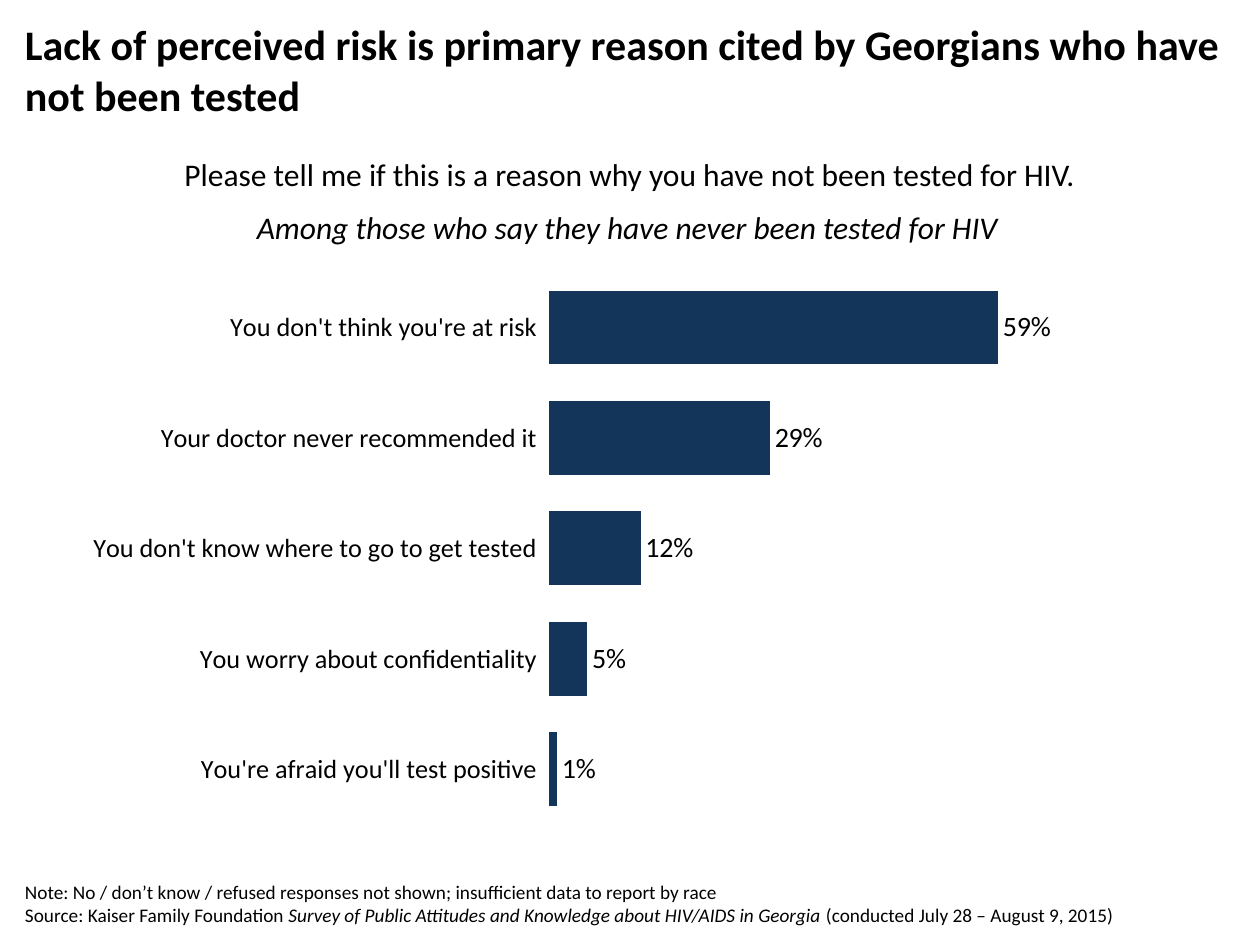
"""Build the slide on reasons Georgians give for not being tested for HIV."""
from lxml import etree
from pptx import Presentation
from pptx.chart.data import CategoryChartData
from pptx.dml.color import RGBColor
from pptx.enum.chart import XL_CHART_TYPE, XL_LABEL_POSITION, XL_TICK_MARK
from pptx.enum.text import MSO_ANCHOR, PP_ALIGN
from pptx.oxml.ns import qn
from pptx.util import Inches, Pt

BLACK = RGBColor(0x00, 0x00, 0x00)
NAVY = RGBColor(0x13, 0x35, 0x59)
FONT = "Calibri"
LEFT, CENTER = PP_ALIGN.LEFT, PP_ALIGN.CENTER
TOP, BOTTOM = MSO_ANCHOR.TOP, MSO_ANCHOR.BOTTOM
BAR_CLUSTERED = XL_CHART_TYPE.BAR_CLUSTERED
OUTSIDE_END = XL_LABEL_POSITION.OUTSIDE_END
TICK_OUTSIDE = XL_TICK_MARK.OUTSIDE

PLAIN, BOLD, ITALIC = {}, {"bold": True}, {"italic": True}
TEXTS = [
    {"box": (0.1, 0.1, 9.8, 1), "size": 24, "align": LEFT, "anchor": TOP,
     "paragraphs": [[("Lack of perceived risk is primary reason cited by Georgians "
                      "who have not been tested", BOLD)]]},
    {"box": (0.1, 1.18, 9.8, 0.4), "size": 18, "align": CENTER, "anchor": TOP,
     "paragraphs": [[("Please tell me if this is a reason why you have not been "
                      "tested for HIV.", PLAIN)]]},
    {"box": (0.08, 1.6, 9.8, 0.4), "size": 18, "align": CENTER, "anchor": TOP,
     "paragraphs": [[("Among those who say they have never been tested for HIV",
                      ITALIC)]]},
    {"box": (0.1, 6.8, 9.1, 0.6), "size": 11, "align": LEFT, "anchor": BOTTOM,
     "paragraphs": [
         [("Note: No / don’t know / refused responses not shown; insufficient data "
           "to report by race", PLAIN)],
         [("Source: Kaiser Family Foundation ", PLAIN),
          ("Survey of Public Attitudes and Knowledge about HIV/AIDS in Georgia ",
           ITALIC),
          ("(conducted July 28 – August 9, 2015)", PLAIN)]]},
]
REASONS = [
    ("You're afraid you'll test positive", 0.01),
    ("You worry about confidentiality", 0.05),
    ("You don't know where to go to get tested", 0.12),
    ("Your doctor never recommended it", 0.29),
    ("You don't think you're at risk", 0.59),
]
CHART_BOX = (0.1, 2.16, 8.82, 4.54)
PLOT_LAYOUT = {"layoutTarget": "inner", "xMode": "edge", "yMode": "edge",
               "x": 0.483, "y": 0, "w": 0.479, "h": 0.966}


def style_font(font, size, **formats):
    font.color.rgb = BLACK
    for name, value in {"name": FONT, "size": Pt(size), **formats}.items():
        setattr(font, name, value)


def add_text(slide, box, size, align, anchor, paragraphs):
    frame = slide.shapes.add_textbox(*map(Inches, box)).text_frame
    frame.word_wrap = True
    frame.vertical_anchor = anchor
    for index, runs in enumerate(paragraphs):
        paragraph = frame.add_paragraph() if index else frame.paragraphs[0]
        paragraph.alignment = align
        for text, formats in runs:
            run = paragraph.add_run()
            run.text = text
            style_font(run.font, size, **formats)


def set_plot_layout(chart):
    plot_area = chart.plots[0]._element.getparent()
    for old_layout in plot_area.findall(qn("c:layout")):
        plot_area.remove(old_layout)
    layout = etree.Element(qn("c:layout"))
    manual = etree.SubElement(layout, qn("c:manualLayout"))
    for name, value in PLOT_LAYOUT.items():
        etree.SubElement(manual, qn(f"c:{name}")).set("val", str(value))
    plot_area.insert(0, layout)


def add_reasons_chart(slide):
    data = CategoryChartData(number_format="0%")
    data.categories = [reason for reason, share in REASONS]
    data.add_series("Series 1", [share for reason, share in REASONS])
    chart = slide.shapes.add_chart(
        BAR_CLUSTERED, *map(Inches, CHART_BOX), data).chart
    chart.has_legend = False
    chart.has_title = False
    style_font(chart.font, 18)

    plot = chart.plots[0]
    plot.gap_width = 50
    plot.vary_by_categories = False
    fill = plot.series[0].format.fill
    fill.solid()
    fill.fore_color.rgb = NAVY

    plot.has_data_labels = True
    labels = plot.data_labels
    label_formats = {"show_value": True, "number_format": "0%",
                     "number_format_is_linked": False, "position": OUTSIDE_END}
    for name, value in label_formats.items():
        setattr(labels, name, value)
    style_font(labels.font, 16)

    category_axis = chart.category_axis
    category_axis.major_tick_mark = TICK_OUTSIDE
    category_axis.format.line.fill.background()
    style_font(category_axis.tick_labels.font, 15)
    value_axis = chart.value_axis
    axis_formats = {"visible": False, "has_major_gridlines": False,
                    "minimum_scale": 0, "maximum_scale": 0.7}
    for name, value in axis_formats.items():
        setattr(value_axis, name, value)
    set_plot_layout(chart)


def main():
    presentation = Presentation()
    presentation.slide_width = Inches(10)
    presentation.slide_height = Inches(7.5)
    slide = presentation.slides.add_slide(presentation.slide_layouts[6])
    add_reasons_chart(slide)
    for text in TEXTS:
        add_text(slide, **text)
    presentation.save("out.pptx")


if __name__ == "__main__":
    main()
